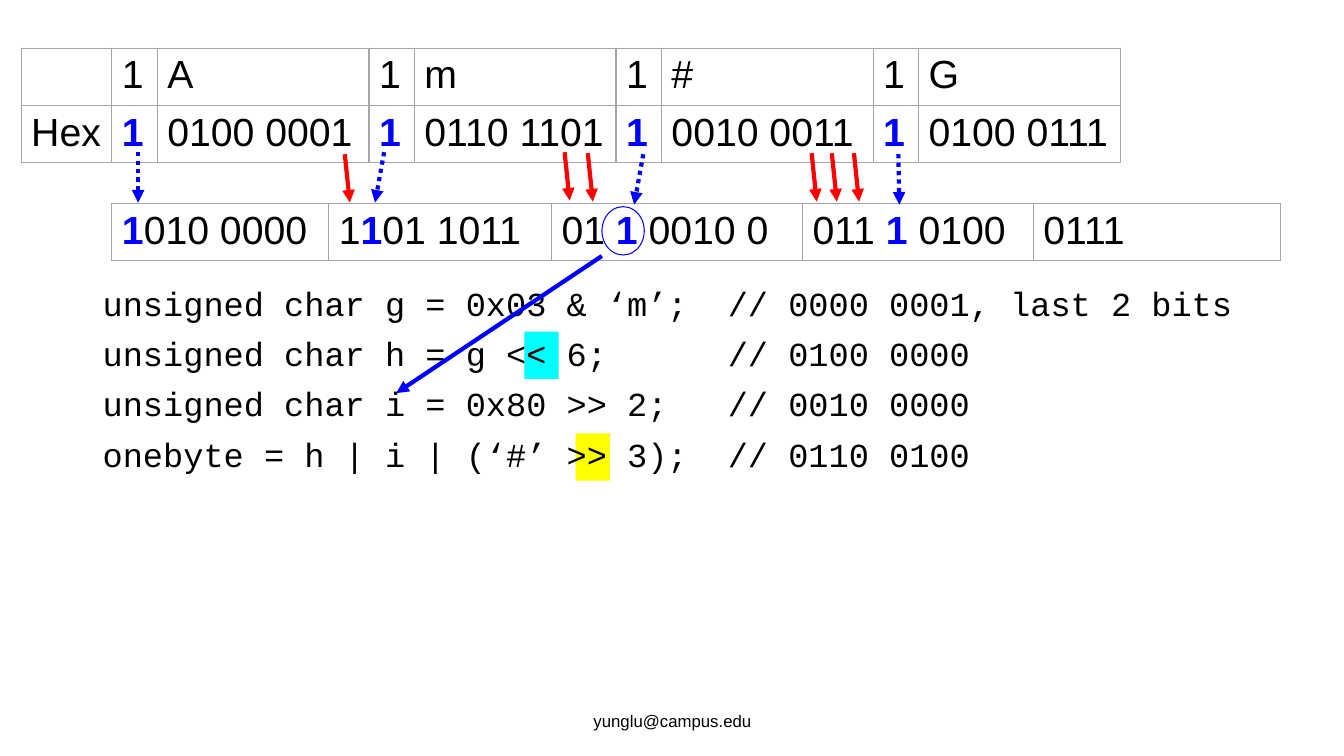
from lxml import etree
from pptx import Presentation
from pptx import util as u
from pptx.dml.color import RGBColor
from pptx.enum import dml, shapes, text
from pptx.oxml.ns import qn

BLUE, RED, BLACK, GREY = "0000FF", "FF0000", "000000", "A6A6A6"
DOTTED = dml.MSO_LINE.ROUND_DOT

LETTERS = ["", "1", "A", "1", "m", "1", "#", "1", "G"]
BITS = ["Hex", "*1*", "0100 0001", "*1*", "0110 1101",
        "*1*", "0010 0011", "*1*", "0100 0111"]
PACKED = ["*1*010 0000", "1*1*01 1011", "01 *1* 0010 0", "011 *1* 0100", "0111"]
CODE = [
    "unsigned char g = 0x03 & ‘m’;\t// 0000 0001, last 2 bits",
    "unsigned char h = g << 6;\t// 0100 0000",
    "unsigned char i = 0x80 >> 2;\t// 0010 0000",
    "onebyte = h | i | (‘#’ >> 3);\t// 0110 0100",
]
MARKER_ARROWS = [(1.37, 1.51, 1.37, 2.01), (3.81, 1.51, 3.72, 2.01),
                 (6.38, 1.53, 6.29, 2.03), (8.91, 1.53, 8.92, 2.03)]
CARRIED_BITS = [(3.42, 1.53), (5.6, 1.51), (5.83, 1.52),
                (8.05, 1.52), (8.25, 1.52), (8.47, 1.52)]


def rgb(value):
    return RGBColor.from_string(value)


def add_run(p, words, size, font="Arial", color=BLACK, bold=False):
    r = p.add_run()
    r.text = words
    for name, value in {"size": u.Pt(size), "name": font, "bold": bold}.items():
        setattr(r.font, name, value)
    r.font.color.rgb = rgb(color)


def add_borders(cell):
    tc_pr = cell._tc.get_or_add_tcPr()
    for side in ("lnL", "lnR", "lnT", "lnB"):
        ln = etree.SubElement(tc_pr, qn(f"a:{side}"), w=str(u.Pt(1)))
        fill = etree.SubElement(ln, qn("a:solidFill"))
        etree.SubElement(fill, qn("a:srgbClr"), val=GREY)


def add_bit_table(s, left, top, widths, rows):
    """Add a table in which text between asterisks is bold blue."""
    row_height = 0.53
    frame = s.shapes.add_table(len(rows), len(widths), u.Inches(left), u.Inches(top),
                               u.Inches(sum(widths)), u.Inches(row_height * len(rows)))
    table = frame.table
    table.first_row = table.horz_banding = False
    for column, width in zip(table.columns, widths):
        column.width = u.Inches(width)
    for i, row in enumerate(rows):
        for j, words in enumerate(row):
            cell = table.cell(i, j)
            add_borders(cell)
            cell.fill.background()
            for n, part in enumerate(words.split("*")):
                if part:
                    marked = n % 2 == 1
                    add_run(cell.text_frame.paragraphs[0], part, 28,
                            color=BLUE if marked else BLACK, bold=marked)


def add_arrow(s, x1, y1, x2, y2, color, dash=None):
    c = s.shapes.add_connector(shapes.MSO_CONNECTOR.STRAIGHT,
                               *map(u.Inches, (x1, y1, x2, y2)))
    c.line.color.rgb = rgb(color)
    c.line.width = u.Pt(3)
    if dash:
        c.line.dash_style = dash
    etree.SubElement(c.line._get_or_add_ln(), qn("a:tailEnd"), type="triangle")
    etree.SubElement(c._element.spPr, qn("a:effectLst"))


def add_shape(s, kind, box, fill=None, line=None):
    sp = s.shapes.add_shape(kind, *map(u.Inches, box))
    sp.shadow.inherit = False
    if fill:
        sp.fill.solid()
        sp.fill.fore_color.rgb = rgb(fill)
    else:
        sp.fill.background()
    if line:
        sp.line.color.rgb = rgb(line)
        sp.line.width = u.Pt(0.75)
    else:
        sp.line.fill.background()


def add_text_box(s, box):
    tf = s.shapes.add_textbox(*map(u.Inches, box)).text_frame
    tf.word_wrap = True
    return tf


def add_code(s, box, lines, comment_at):
    """Add code lines whose comments line up at one tab stop."""
    tf = add_text_box(s, box)
    for i, line in enumerate(lines):
        p = tf.add_paragraph() if i else tf.paragraphs[0]
        p.line_spacing = 0.9
        p.space_before = u.Pt(10)
        tabs = etree.SubElement(p._p.get_or_add_pPr(), qn("a:tabLst"))
        etree.SubElement(tabs, qn("a:tab"), pos=str(u.Inches(comment_at)), algn="l")
        add_run(p, line, 24, "Courier New")


def add_footer(s, words):
    tf = add_text_box(s, (4.42, 6.95, 4.5, 0.4))
    tf.vertical_anchor = text.MSO_ANCHOR.MIDDLE
    p = tf.paragraphs[0]
    p.alignment = text.PP_ALIGN.CENTER
    add_run(p, words, 12)


def main():
    prs = Presentation()
    prs.slide_width, prs.slide_height = u.Inches(13.33), u.Inches(7.5)
    s = prs.slides.add_slide(prs.slide_layouts[6])

    rect, oval = shapes.MSO_SHAPE.RECTANGLE, shapes.MSO_SHAPE.OVAL
    add_shape(s, rect, (5.2, 3.29, 0.34, 0.47), fill="00FFFF")
    add_shape(s, rect, (5.71, 4.3, 0.34, 0.47), fill="FFFF00")
    add_code(s, (0.92, 2.8, 11.5, 3.96), CODE, 6.2)
    add_footer(s, "yunglu@campus.edu")

    add_bit_table(s, 0.21, 0.48, [0.9] + [0.45, 2.1, 0.45, 2] * 2, [LETTERS, BITS])
    add_bit_table(s, 1.11, 2.02, [2.15, 2.21, 2.49, 2.29, 2.45], [PACKED])

    for ends in MARKER_ARROWS:
        add_arrow(s, *ends, BLUE, DOTTED)
    for x, y in CARRIED_BITS:
        add_arrow(s, x, y, x + 0.05, y + 0.48, RED)

    add_shape(s, oval, (5.97, 2.05, 0.42, 0.48), line=BLUE)
    add_arrow(s, 5.97, 2.54, 3.93, 3.9, BLUE)
    prs.save("out.pptx")


if __name__ == "__main__":
    main()
